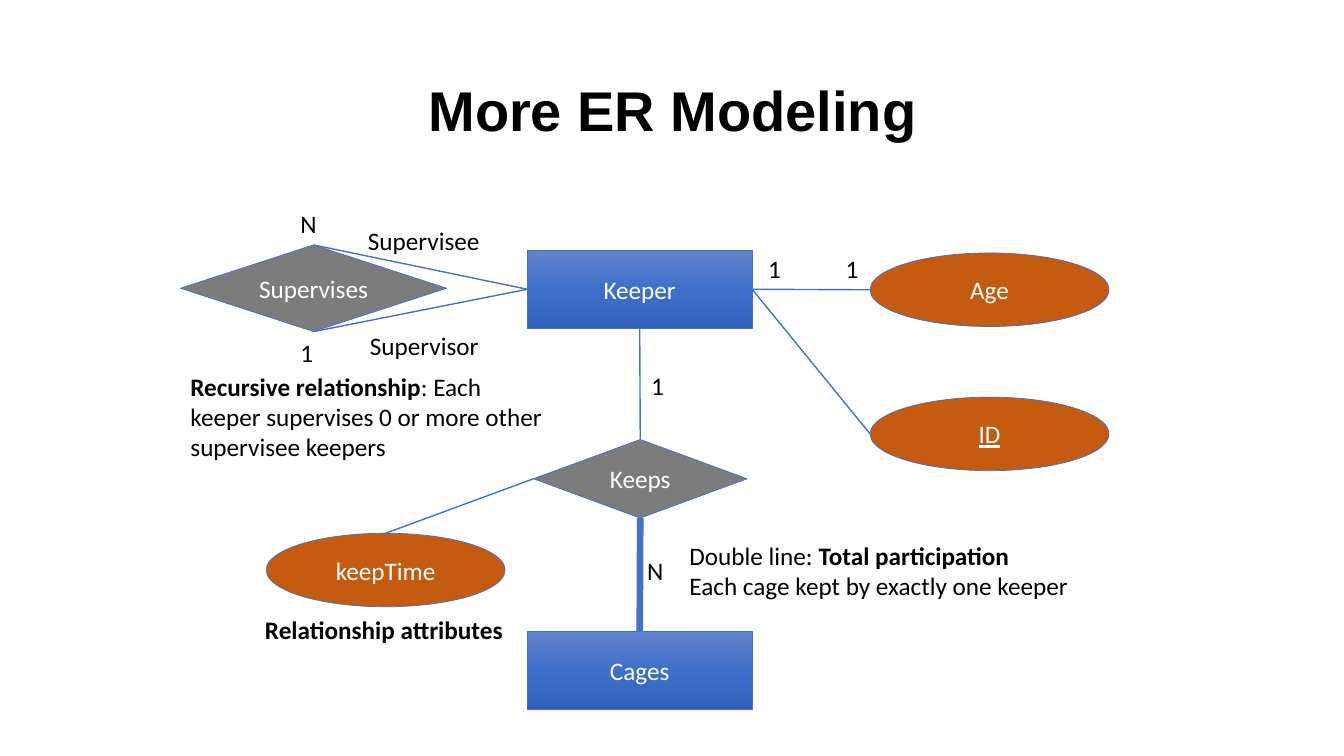
"""Build the ER modeling slide with its entities, relationships and notes."""
from copy import deepcopy

from lxml import etree
from pptx import Presentation
from pptx.dml.color import RGBColor
from pptx.enum import shapes, text
from pptx.oxml import ns
from pptx.util import Inches, Pt

BLACK = RGBColor(0x00, 0x00, 0x00)
WHITE = RGBColor(0xFF, 0xFF, 0xFF)
BLUE = RGBColor(0x44, 0x72, 0xC4)
GRAY = RGBColor(0x7C, 0x7C, 0x7C)
ORANGE = RGBColor(0xC5, 0x5A, 0x11)
BLUE_STOPS = [
    (0, RGBColor(0x61, 0x83, 0xCB)),
    (0.5, RGBColor(0x3E, 0x70, 0xCA)),
    (1, RGBColor(0x30, 0x62, 0xBB)),
]
TOP, LEFT, BOTTOM, RIGHT = range(4)
ENTITY = shapes.MSO_SHAPE.RECTANGLE
RELATION = shapes.MSO_SHAPE.DIAMOND
ATTRIBUTE = shapes.MSO_SHAPE.OVAL

TITLE = "More ER Modeling"
NODES = [
    ("Keeper", ENTITY, (5.23, 2.48, 2.23, 0.78)),
    ("Cages", ENTITY, (5.23, 6.26, 2.23, 0.78)),
    ("Keeps", RELATION, (5.29, 4.36, 2.12, 0.78)),
    ("Supervises", RELATION, (1.79, 2.43, 2.64, 0.86)),
    ("Age", ATTRIBUTE, (8.63, 2.51, 2.37, 0.73)),
    ("ID", ATTRIBUTE, (8.63, 3.94, 2.37, 0.73)),
    ("keepTime", ATTRIBUTE, (2.64, 5.29, 2.37, 0.73)),
]
LINKS = [
    ("Keeper", RIGHT, "Age", LEFT, 1),
    ("Keeper", RIGHT, "ID", LEFT, 1),
    ("Keeper", BOTTOM, "Keeps", TOP, 1),
    ("Keeps", BOTTOM, "Cages", TOP, 4.75),
    ("Supervises", TOP, "Keeper", LEFT, 1),
    ("Supervises", BOTTOM, "Keeper", LEFT, 1),
    ("Keeps", LEFT, "keepTime", TOP, 1),
]
LABELS = [
    ("1", (7.52, 2.46, 0.34, 0.4)),
    ("1", (8.29, 2.46, 0.34, 0.4)),
    ("1", (6.36, 3.62, 0.34, 0.4)),
    ("N", (6.32, 5.46, 0.36, 0.4)),
    ("Supervisee", (3.55, 2.19, 1.32, 0.4)),
    ("Supervisor", (3.57, 3.23, 1.29, 0.4)),
    ("N", (2.88, 2.02, 0.36, 0.4)),
    ("1", (2.88, 3.3, 0.34, 0.4)),
]
NOTES = [
    ((6.74, 5.31, 4.77, 0.71), [
        [("Double line: ", False), ("Total participation", True)],
        [("Each cage kept by exactly one keeper", False)],
    ]),
    ((1.79, 3.63, 3.69, 1.01), [
        [("Recursive relationship", True),
         (": Each keeper supervises 0 or more other supervisee keepers", False)],
    ]),
    ((2.53, 6.05, 2.7, 0.4), [[("Relationship attributes", True)]]),
]


def add_span(para, words, *, size=18, font="Calibri", color=BLACK, bold=False, underline=False):
    """Add formatted words to a paragraph."""
    span = para.add_run()
    span.text = words
    span.font.size = Pt(size)
    span.font.name = font
    span.font.color.rgb = color
    span.font.bold = bold
    span.font.underline = underline


def fill_entity(box):
    """Fill a box with the vertical blue gradient."""
    box.fill.gradient()
    box.fill.gradient_angle = 270
    stop_list = box._element.spPr.find(".//" + ns.qn("a:gsLst"))
    stop_list.append(deepcopy(stop_list[-1]))
    for stop, (position, color) in zip(box.fill.gradient_stops, BLUE_STOPS):
        stop.position = position
        stop.color.rgb = color


def add_node(page, name, kind, place):
    """Draw an entity, relationship or attribute."""
    box = page.shapes.add_shape(kind, *map(Inches, place))
    box.shadow.inherit = False
    if kind == ENTITY:
        fill_entity(box)
    else:
        box.fill.solid()
        box.fill.fore_color.rgb = GRAY if kind == RELATION else ORANGE
    box.line.color.rgb = BLUE
    box.line.width = Pt(0.5)
    box.text_frame.vertical_anchor = text.MSO_ANCHOR.MIDDLE
    para = box.text_frame.paragraphs[0]
    para.alignment = text.PP_ALIGN.CENTER
    add_span(para, name, color=WHITE, underline=name == "ID")
    return box


def side_point(box, side):
    """Return the middle of one side of a box."""
    across = {LEFT: 0, RIGHT: box.width}.get(side, box.width // 2)
    down = {TOP: 0, BOTTOM: box.height}.get(side, box.height // 2)
    return box.left + across, box.top + down


def add_link(page, start, start_side, end, end_side, width):
    """Draw a line between the sides of two nodes."""
    link = page.shapes.add_connector(
        shapes.MSO_CONNECTOR.STRAIGHT,
        *side_point(start, start_side), *side_point(end, end_side))
    link.begin_connect(start, start_side)
    if end.auto_shape_type != ATTRIBUTE or end_side == TOP:
        link.end_connect(end, end_side)
    link.line.color.rgb = BLUE
    link.line.width = Pt(width)
    etree.SubElement(link._element.spPr, ns.qn("a:effectLst"))


def add_text(page, place, paragraphs, *, wrap=True):
    """Add a text box holding paragraphs of (words, bold) pairs."""
    frame = page.shapes.add_textbox(*map(Inches, place)).text_frame
    frame.word_wrap = wrap
    frame.auto_size = text.MSO_AUTO_SIZE.SHAPE_TO_FIT_TEXT
    for index, spans in enumerate(paragraphs):
        para = frame.add_paragraph() if index else frame.paragraphs[0]
        for words, bold in spans:
            add_span(para, words, bold=bold)


def main():
    """Build and save the deck."""
    deck = Presentation()
    deck.slide_width, deck.slide_height = Inches(13.33), Inches(7.5)
    page = deck.slides.add_slide(deck.slide_layouts[5])
    title = page.shapes.title
    title.left, title.top, title.width, title.height = map(Inches, (0.92, 0.4, 11.5, 1.45))
    title.text_frame.vertical_anchor = text.MSO_ANCHOR.MIDDLE
    para = title.text_frame.paragraphs[0]
    para.alignment = text.PP_ALIGN.CENTER
    para.line_spacing = 0.9
    add_span(para, TITLE, size=40, font="Arial", bold=True)

    nodes = {name: add_node(page, name, kind, place) for name, kind, place in NODES}
    for start, start_side, end, end_side, width in LINKS:
        add_link(page, nodes[start], start_side, nodes[end], end_side, width)
    for words, place in LABELS:
        add_text(page, place, [[(words, False)]], wrap=False)
    for place, paragraphs in NOTES:
        add_text(page, place, paragraphs)
    deck.save("out.pptx")


if __name__ == "__main__":
    main()
